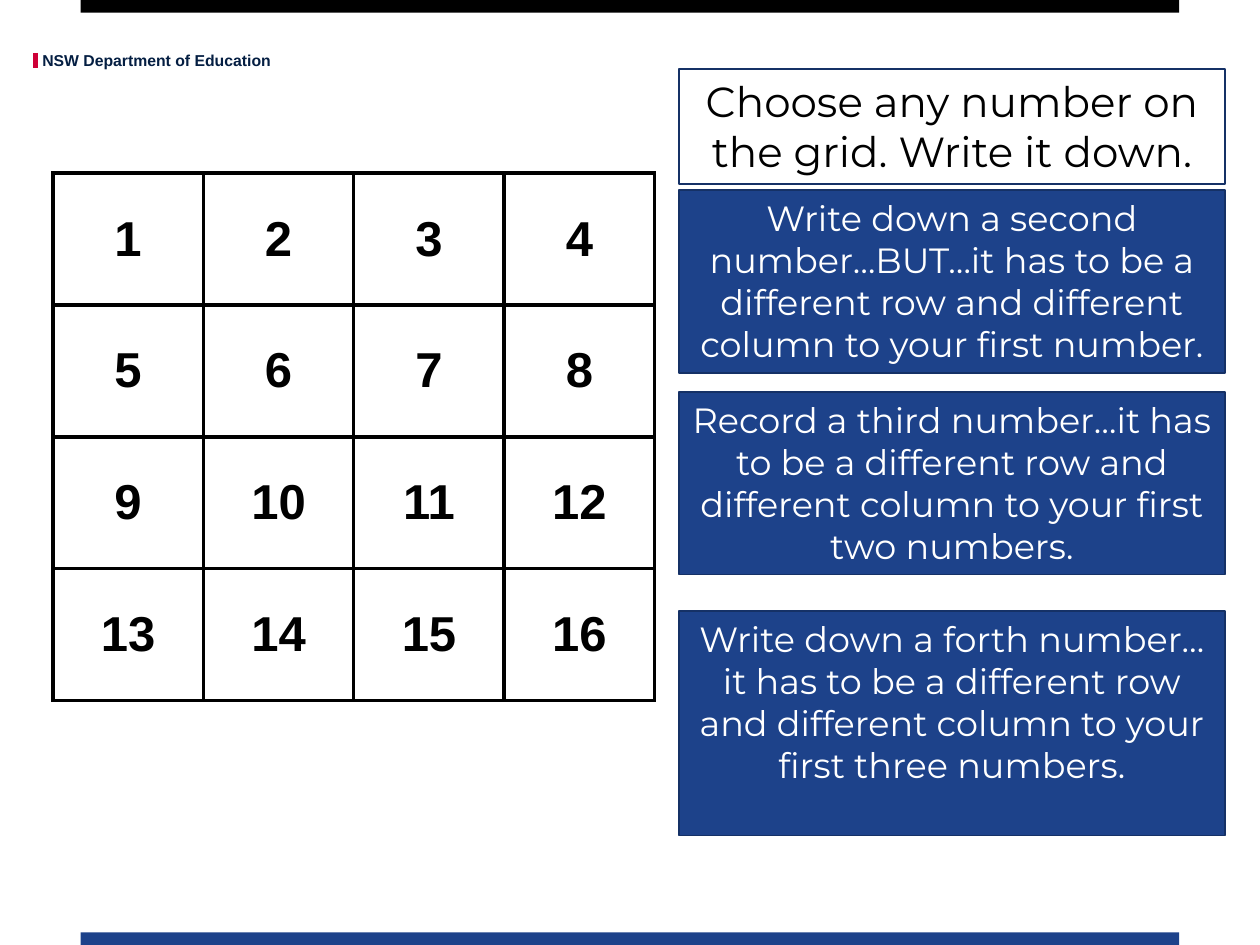
"""Build a number-grid activity slide with four step-by-step instructions."""
from dataclasses import dataclass

from lxml.etree import SubElement
from pptx import Presentation
from pptx.dml.color import RGBColor
from pptx.enum.shapes import MSO_CONNECTOR, MSO_SHAPE
from pptx.enum.text import MSO_ANCHOR, PP_ALIGN
from pptx.oxml.ns import qn
from pptx.util import Pt


@dataclass(frozen=True)
class Theme:
    black: str = "000000"
    white: str = "FFFFFF"
    blue: str = "1D428A"
    outline: str = "153166"
    navy: str = "041E42"
    red: str = "CE0037"
    label_font: str = "Arial"
    step_font: str = "Montserrat"
    label_size: float = 9
    step_size: float = 20
    first_step_size: float = 24
    number_size: float = 28


THEME = Theme()
SLIDE_WIDTH, SLIDE_HEIGHT = 720, 540
DEPARTMENT = "NSW Department of Education"
STEPS = [
    ("Choose any number on the grid. Write it down.", 39.6, 65.5),
    ("Write down a second number…BUT…it has to be a different row and "
     "different column to your first number.", 108.7, 104.4),
    ("Record a third number…it has to be a different row and "
     "different column to your first two numbers.", 223.9, 104.4),
    ("Write down a forth number…it has to be a different row and "
     "different column to your first three numbers.", 349.2, 128.2),
]
STEP_LEFT, STEP_WIDTH = 388.1, 311.8
GRID_SIZE, GRID_LEFT, GRID_TOP = 4, 30.2, 98.9
CELL_WIDTH, CELL_HEIGHT, BORDER_WIDTH = 86, 75.4, 2.25
BAR_LEFT, BAR_HEIGHT = 46.1, 7.2


def color(value):
    return RGBColor.from_string(value)


def style_paragraph(paragraph, font_name, size, font_color, bold=False, alignment=PP_ALIGN.CENTER):
    paragraph.alignment = alignment
    font = paragraph.font
    font.name, font.size, font.bold = font_name, Pt(size), bold
    font.color.rgb = color(font_color)


def add_box(slide, left, top, width, height, fill=None, outline=None):
    shape = slide.shapes.add_shape(MSO_SHAPE.RECTANGLE, Pt(left), Pt(top), Pt(width), Pt(height))
    shape.shadow.inherit = False
    if fill:
        shape.fill.solid()
        shape.fill.fore_color.rgb = color(fill)
    else:
        shape.fill.background()
    if outline:
        shape.line.color.rgb = color(outline)
        shape.line.width = Pt(1)
    else:
        shape.line.fill.background()
    return shape


def add_header(slide):
    accent = slide.shapes.add_connector(
        MSO_CONNECTOR.STRAIGHT, Pt(20.2), Pt(30.2), Pt(20.2), Pt(38.9))
    accent.line.color.rgb = color(THEME.red)
    accent.line.width = Pt(2.5)
    SubElement(accent._element.spPr, qn("a:effectLst"))

    label = slide.shapes.add_textbox(Pt(24.2), Pt(28.8), Pt(131.8), Pt(10.8))
    frame = label.text_frame
    frame.margin_left = frame.margin_top = frame.margin_right = frame.margin_bottom = 0
    frame.word_wrap = False
    frame.text = DEPARTMENT
    style_paragraph(frame.paragraphs[0], THEME.label_font, THEME.label_size,
                    THEME.navy, bold=True, alignment=PP_ALIGN.LEFT)


def add_bars(slide):
    bar_width = SLIDE_WIDTH - 2 * BAR_LEFT
    for top, fill in ((0, THEME.black), (SLIDE_HEIGHT - BAR_HEIGHT, THEME.blue)):
        add_box(slide, BAR_LEFT, top, bar_width, BAR_HEIGHT, fill)


def add_steps(slide):
    for index, (text, top, height) in enumerate(STEPS):
        first = index == 0
        box = add_box(slide, STEP_LEFT, top, STEP_WIDTH, height,
                      None if first else THEME.blue, THEME.outline)
        frame = box.text_frame
        frame.word_wrap = True
        frame.vertical_anchor = MSO_ANCHOR.TOP
        frame.text = text
        style_paragraph(frame.paragraphs[0], THEME.step_font,
                        THEME.first_step_size if first else THEME.step_size,
                        THEME.black if first else THEME.white)


def add_borders(cell):
    properties = cell._tc.get_or_add_tcPr()
    for position, side in enumerate(("a:lnL", "a:lnR", "a:lnT", "a:lnB")):
        line = properties.makeelement(qn(side), {"w": str(Pt(BORDER_WIDTH))})
        fill = SubElement(line, qn("a:solidFill"))
        SubElement(fill, qn("a:srgbClr"), val=THEME.black)
        properties.insert(position, line)


def add_number_grid(slide):
    table = slide.shapes.add_table(
        GRID_SIZE, GRID_SIZE, Pt(GRID_LEFT), Pt(GRID_TOP),
        Pt(GRID_SIZE * CELL_WIDTH), Pt(GRID_SIZE * CELL_HEIGHT)).table
    table.first_row = table.horz_banding = False
    for column in table.columns:
        column.width = Pt(CELL_WIDTH)
    for row in table.rows:
        row.height = Pt(CELL_HEIGHT)
    for number, cell in enumerate(table.iter_cells(), start=1):
        cell.text = str(number)
        cell.vertical_anchor = MSO_ANCHOR.MIDDLE
        cell.fill.background()
        style_paragraph(cell.text_frame.paragraphs[0], THEME.label_font,
                        THEME.number_size, THEME.black, bold=True)
        add_borders(cell)


def main():
    presentation = Presentation()
    presentation.slide_width, presentation.slide_height = Pt(SLIDE_WIDTH), Pt(SLIDE_HEIGHT)
    slide = presentation.slides.add_slide(presentation.slide_layouts.get_by_name("Blank"))
    add_header(slide)
    add_bars(slide)
    add_steps(slide)
    add_number_grid(slide)
    presentation.save("out.pptx")


if __name__ == "__main__":
    main()
